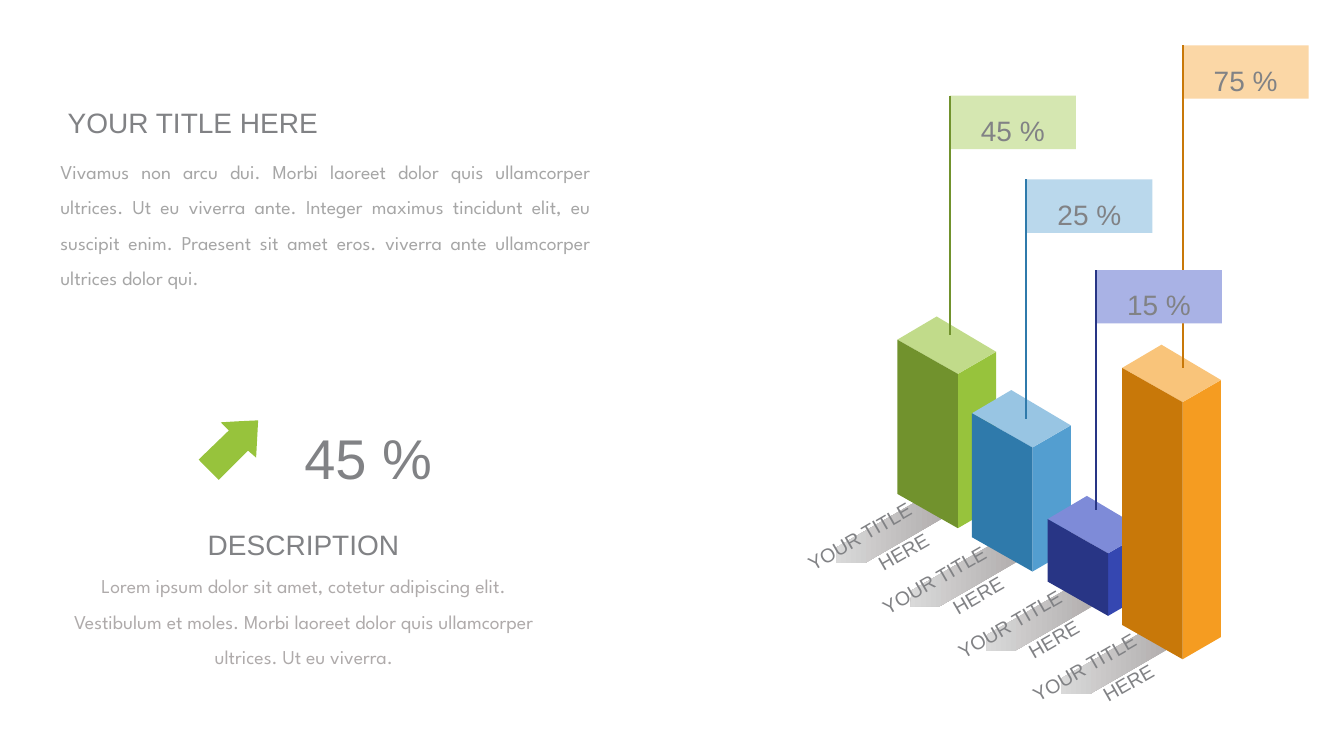
from collections import namedtuple

from lxml import etree
from pptx import Presentation, util as u
from pptx.dml.color import RGBColor
from pptx.enum import shapes, text
from pptx.oxml.ns import qn

PX = 9144  # EMU per px: 100 px to the inch
SLIDE_SIZE = (1333, 750)
HEADING_FONT, BODY_FONT = "Arial", "League Spartan"
GREY, SILVER, LIGHT_GREY, LIME = "818285", "AFABAB", "A6A6A6", "97C33C"
ALIGN = text.PP_ALIGN

Bar = namedtuple("Bar", "value height right top left flag flag_x flag_y pole_end")
BARS = [
    Bar("45 %", 153, LIME, "C1DB8A", "71922D", "D5E7B1", 942, 95, 332),
    Bar("25 %", 123, "539ED0", "98C5E3", "2F7AAB", "BAD8EC", 1018, 178, 416),
    Bar("15 %", 62, "3547B1", "7E8BD8", "283585", "A9B2E5", 1087, 268, 506),
    Bar("75 %", 255, "F59C21", "F9C47A", "C87809", "FBD7A6", 1173, 45, 365),
]
# Front bottom corner of the first bar, and the step from bar to bar
FRONT, STEP = (950, 524), (74.4, 43.4)
SHADOW = [(-120, 19), (-121, 35), (-93, 35), (-6, -15), (-33, -31)]
ARROW = [(219, 419), (235, 418), (256, 417), (254, 454), (246, 447),
         (217, 476), (197, 456), (227, 427)]


def rgb(hex_code):
    return RGBColor.from_string(hex_code)


class Painter:
    """Holds the shared style and the slide being drawn."""

    def __init__(self, page, line_spacing=1.5):
        self.items = page.shapes
        self.line_spacing = line_spacing

    def _finish(self, shape, color):
        shape.shadow.inherit = False
        shape.line.fill.background()
        shape.fill.solid()
        shape.fill.fore_color.rgb = rgb(color)
        return shape

    def polygon(self, points, color):
        builder = self.items.build_freeform(*points[0], scale=float(PX))
        builder.add_line_segments(points[1:], close=True)
        return self._finish(builder.convert_to_shape(), color)

    def fading_polygon(self, points, dark, light):
        """Fill runs from dark on the right to light on the left."""
        fill = self.polygon(points, dark).fill
        fill.gradient()
        fill.gradient_angle = 180
        for stop, color in zip(fill.gradient_stops, (dark, light)):
            stop.color.rgb = rgb(color)

    def rectangle(self, x, y, width, height, color):
        frame = [PX * n for n in (x, y, width, height)]
        self._finish(self.items.add_shape(shapes.MSO_SHAPE.RECTANGLE, *frame), color)

    def line(self, x1, y1, x2, y2, color, weight=1.5):
        ends = [PX * n for n in (x1, y1, x2, y2)]
        line = self.items.add_connector(shapes.MSO_CONNECTOR.STRAIGHT, *ends)
        line.line.color.rgb = rgb(color)
        line.line.width = u.Pt(weight)
        etree.SubElement(line._element.spPr, qn("a:effectLst"))

    def words(self, x, y, width, height, wording, size, color=GREY,
              font=HEADING_FONT, align=ALIGN.CENTER, rotation=0):
        box = self.items.add_textbox(*[PX * n for n in (x, y, width, height)])
        box.rotation = rotation
        box.text_frame.word_wrap = True
        box.text_frame.vertical_anchor = text.MSO_ANCHOR.MIDDLE
        para = box.text_frame.paragraphs[0]
        para.alignment = align
        para.line_spacing = self.line_spacing
        span = para.add_run()
        span.text = wording
        span.font.size = u.Pt(size)
        span.font.name = font
        span.font.color.rgb = rgb(color)

    def bar(self, x, y, bar):
        """Draw a block whose front bottom corner is at x, y."""
        roof = y - bar.height
        left, right, back = (x - 60, roof - 34), (x + 38, roof - 22), (x - 21, roof - 57)
        self.polygon([(x, y), (x + 38, y - 22), right, (x, roof)], bar.right)
        self.polygon([(x, roof), right, back, left], bar.top)
        self.polygon([left, (x - 60, y - 34), (x, y), (x, roof)], bar.left)

    def flag(self, bar):
        x, y = bar.flag_x, bar.flag_y
        self.rectangle(x, y, 125, 53, bar.flag)
        self.line(x, y, x, bar.pole_end, bar.left)
        self.words(x + 15, y + 14, 95, 24, bar.value, 20)


def main():
    deck = Presentation()
    deck.slide_width, deck.slide_height = [PX * n for n in SLIDE_SIZE]
    painter = Painter(deck.slides.add_slide(deck.slide_layouts[6]))

    corners = [tuple(round(start + step * i) for start, step in zip(FRONT, STEP))
               for i in range(len(BARS))]
    for x, y in reversed(corners):
        painter.fading_polygon([(x + dx, y + dy) for dx, dy in SHADOW], SILVER, "D9D9D9")
    for (x, y), bar in zip(corners, BARS):
        painter.bar(x, y, bar)
    for x, y in corners:
        painter.words(x - 211, y + 20, 190, 24, " YOUR TITLE HERE", 14,
                      align=ALIGN.RIGHT, rotation=330)
    # The tallest bar's pole passes behind the lowest flag
    for bar in sorted(BARS, key=lambda bar: bar.height, reverse=True):
        painter.flag(bar)

    painter.words(50, 551, 503, 119,
                  "Lorem ipsum dolor sit amet, cotetur adipiscing elit. Vestibulum et moles. "
                  "Morbi laoreet dolor quis ullamcorper ultrices. Ut eu viverra.",
                  14, SILVER, BODY_FONT)
    painter.words(170, 502, 262, 59, "DESCRIPTION", 20)
    painter.words(289, 400, 152, 73, "45 %", 40)
    painter.polygon(ARROW, LIME)
    painter.words(50, 83, 546, 59, " YOUR TITLE HERE", 20, align=ALIGN.LEFT)
    painter.words(50, 120, 546, 194,
                  "Vivamus non arcu dui. Morbi laoreet dolor quis ullamcorper ultrices. "
                  "Ut eu viverra ante. Integer maximus tincidunt elit, eu suscipit enim. "
                  "Praesent sit amet eros. viverra ante ullamcorper ultrices dolor qui.",
                  14, LIGHT_GREY, BODY_FONT, ALIGN.JUSTIFY)

    deck.save("out.pptx")


if __name__ == "__main__":
    main()
